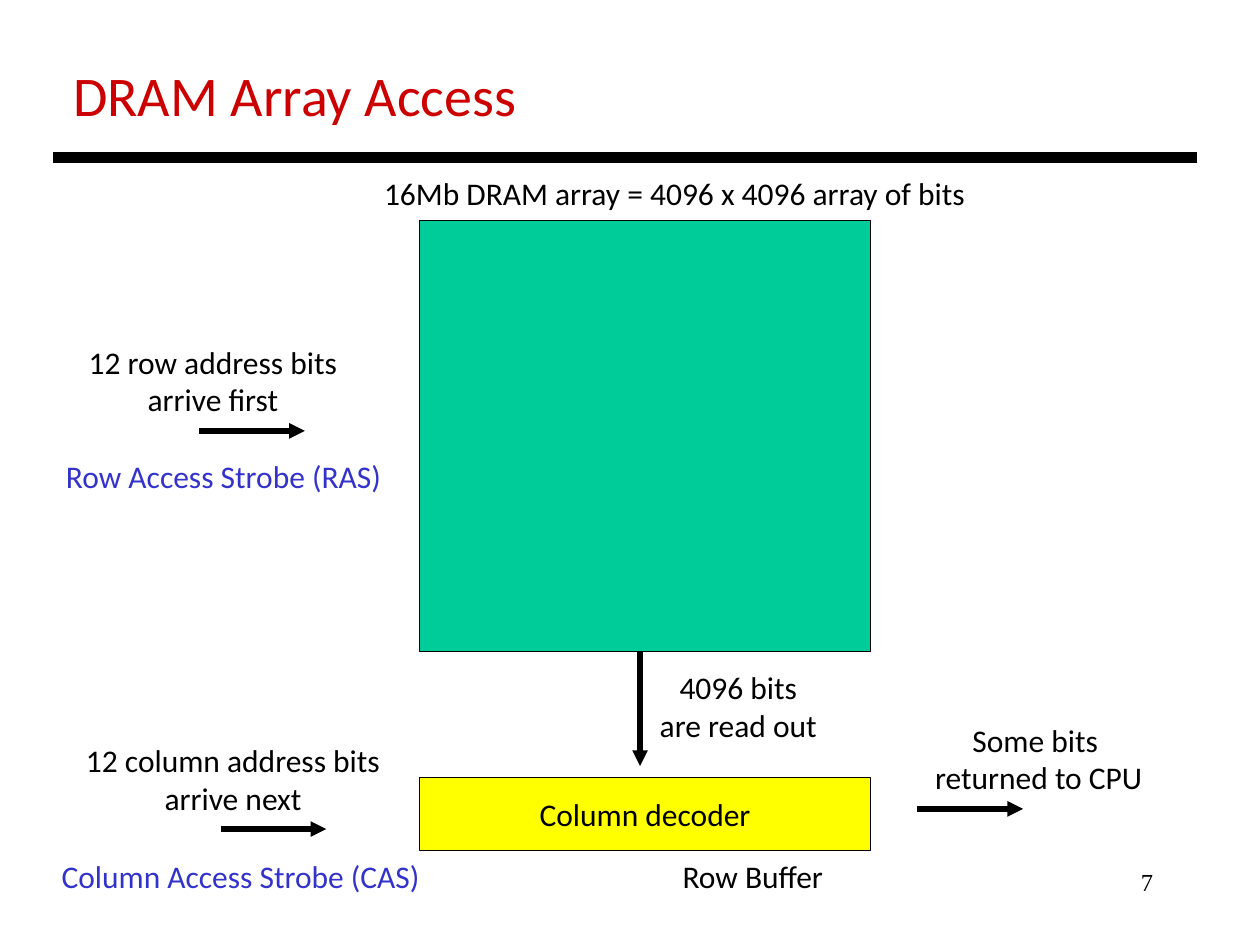
from lxml import etree
from pptx import Presentation
from pptx.dml.color import RGBColor
from pptx.enum.shapes import MSO_CONNECTOR, MSO_SHAPE
from pptx.enum.text import MSO_ANCHOR, PP_ALIGN
from pptx.oxml.ns import qn
from pptx.util import Inches, Pt

LEFT, CENTER, RIGHT = PP_ALIGN.LEFT, PP_ALIGN.CENTER, PP_ALIGN.RIGHT
TOP, MIDDLE = MSO_ANCHOR.TOP, MSO_ANCHOR.MIDDLE
RECTANGLE = MSO_SHAPE.RECTANGLE
STRAIGHT = MSO_CONNECTOR.STRAIGHT
TITLE_ONLY = 5

COLORS = {
    "title": "CC0000",
    "ink": "000000",
    "strobe": "3333CC",
    "array": "00CC99",
    "decoder": "FFFF00",
}


class DiagramSlide:
    body_font = "Calibri"
    number_font = "Times New Roman"
    body_size = 18

    def __init__(self, presentation):
        self.slide = presentation.slides.add_slide(presentation.slide_layouts[TITLE_ONLY])
        self.shapes = self.slide.shapes

    def color(self, name):
        return RGBColor.from_string(COLORS[name])

    def fill_text(self, frame, lines, color="ink", size=body_size, font=body_font,
                  align=CENTER, anchor=TOP):
        frame_format = {"word_wrap": False, "vertical_anchor": anchor}
        for key, value in frame_format.items():
            setattr(frame, key, value)
        font_format = {"name": font, "size": Pt(size), "bold": False}
        for index, line in enumerate(lines):
            paragraph = frame.paragraphs[0] if index == 0 else frame.add_paragraph()
            paragraph.alignment = align
            run = paragraph.add_run()
            run.text = line
            for key, value in font_format.items():
                setattr(run.font, key, value)
            run.font.color.rgb = self.color(color)

    def title(self, text, left, top, width, height):
        heading = self.shapes.title
        position = {"left": left, "top": top, "width": width, "height": height}
        for key, value in position.items():
            setattr(heading, key, Inches(value))
        self.fill_text(heading.text_frame, [text], "title", 32, align=LEFT)

    def label(self, lines, left, top, width, height, **style):
        box = self.shapes.add_textbox(*map(Inches, (left, top, width, height)))
        self.fill_text(box.text_frame, lines, **style)

    def block(self, fill, left, top, width, height, lines=()):
        block = self.shapes.add_shape(RECTANGLE, *map(Inches, (left, top, width, height)))
        block.shadow.inherit = False
        block.fill.solid()
        block.fill.fore_color.rgb = self.color(fill)
        block.line.color.rgb = self.color("ink")
        block.line.width = Pt(0.75)
        self.fill_text(block.text_frame, lines, anchor=MIDDLE)

    def line(self, start, end, width=3, arrow=True):
        connector = self.shapes.add_connector(STRAIGHT, *map(Inches, (*start, *end)))
        connector.line.color.rgb = self.color("ink")
        connector.line.width = Pt(width)
        if arrow:
            outline = connector.line._get_or_add_ln()
            etree.SubElement(outline, qn("a:tailEnd"), type="triangle")
        etree.SubElement(connector._element.spPr, qn("a:effectLst"))


def main():
    presentation = Presentation()
    presentation.slide_width = Inches(10)
    presentation.slide_height = Inches(7.5)
    diagram = DiagramSlide(presentation)

    diagram.title("DRAM Array Access", 0.48, 0.43, 3.75, 0.64)
    diagram.line((0.42, 1.25), (9.5, 1.25), width=6, arrow=False)

    array_left, array_top, array_width, array_height = 3.33, 1.75, 3.58, 3.42
    array_bottom = array_top + array_height
    diagram.block("array", array_left, array_top, array_width, array_height)
    diagram.block("decoder", array_left, 6.17, array_width, 0.58, ["Column decoder"])

    one_line, two_lines = 0.4, 0.71
    captions = [
        (["16Mb DRAM array = 4096 x 4096 array of bits"], 2.92, 1.33, 4.87, "ink"),
        (["12 row address bits", "arrive first"], 0.59, 2.67, 2.2, "ink"),
        (["12 column address bits", "arrive next"], 0.57, 5.83, 2.56, "ink"),
        (["Some bits ", "returned to CPU"], 7.31, 5.67, 1.87, "ink"),
        (["4096 bits", "are read out"], 5.13, 5.25, 1.46, "ink"),
        (["Row Access Strobe (RAS)"], 0.41, 3.58, 2.73, "strobe"),
        (["Column Access Strobe (CAS)"], 0.37, 6.75, 3.08, "strobe"),
        (["Row Buffer"], 5.31, 6.75, 1.33, "ink"),
    ]
    for lines, left, top, width, color in captions:
        height = one_line if len(lines) == 1 else two_lines
        diagram.label(lines, left, top, width, height, color=color)

    signal_length = 0.84
    for left, y in [(1.58, 3.42), (1.75, 6.58), (7.28, 6.42)]:
        diagram.line((left, y), (left + signal_length, y))
    diagram.line((5.08, array_bottom), (5.08, 6.08))

    diagram.label(["7"], 7.17, 6.83, 2.08, 0.5, size=14,
                  font=diagram.number_font, align=RIGHT)

    presentation.save("out.pptx")


if __name__ == "__main__":
    main()
